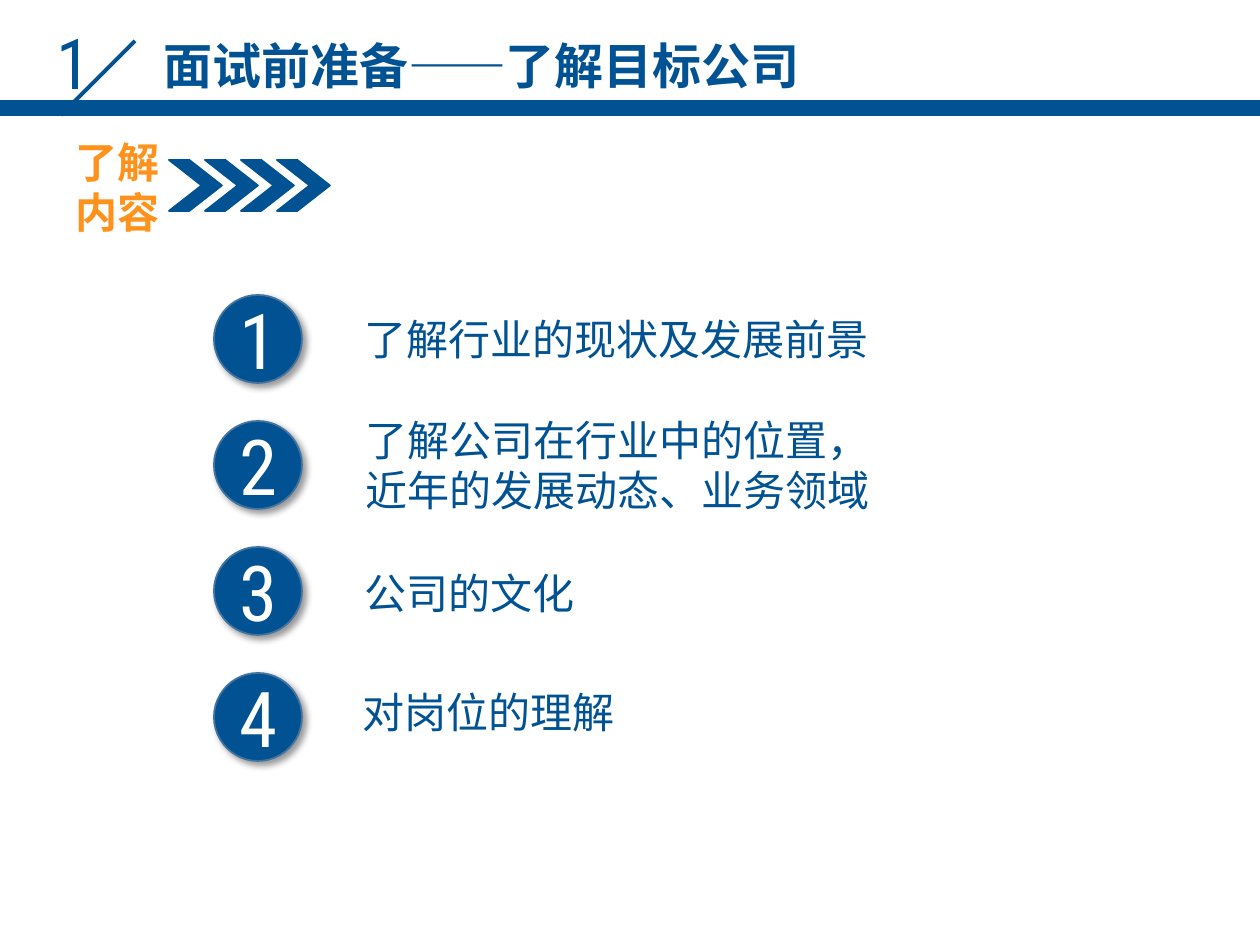
from lxml.etree import SubElement
from pptx import Presentation
from pptx.dml.color import RGBColor
from pptx.enum.shapes import MSO_CONNECTOR, MSO_SHAPE
from pptx.oxml.ns import qn
from pptx.util import Emu, Pt

BLUE, RIM, ORANGE, WHITE = "005292", "43739E", "FF921D", "FFFFFF"
CJK, LATIN = "Noto Sans CJK SC", "Roboto Condensed"
TOPICS = [
    ("了解行业的现状及发展前景", 352, 12, 908),
    ("了解公司在行业中的位置，近年的发展动态、业务领域", 353, -13, 558),
    ("公司的文化", 352, 14, 796),
    ("对岗位的理解", 350, 7, 796),
]


def px(length):
    return Emu(length * 914400 // 126)


def color(hex_code):
    return RGBColor.from_string(hex_code)


def add_text(slide, text, box, size, face, hex_code, bold=False):
    frame = slide.shapes.add_textbox(*map(px, box)).text_frame
    frame.word_wrap = True
    paragraph = frame.paragraphs[0]
    run = paragraph.add_run()
    run.text = text
    font = paragraph.font
    font.size, font.name, font.bold = Pt(size), face, bold
    font.color.rgb = color(hex_code)
    if face == CJK:
        paragraph.line_spacing = Pt(size * 1.2)
        SubElement(run._r.get_or_add_rPr(), qn("a:ea"), typeface=face)


def add_solid(slide, preset, box, rim=BLUE):
    solid = slide.shapes.add_shape(preset, *map(px, box))
    solid.shadow.inherit = False
    solid.fill.solid()
    solid.fill.fore_color.rgb = color(BLUE)
    solid.line.color.rgb = color(rim)
    solid.line.width = Pt(1)
    return solid


def add_drop_shadow(solid):
    effects = solid._element.spPr.find(qn("a:effectLst"))
    shadow = SubElement(effects, qn("a:outerShdw"), blurRad=str(Pt(4)), dist=str(Pt(3)),
                        dir="2700000", algn="tl", rotWithShape="0")
    tint = SubElement(shadow, qn("a:srgbClr"), val="000000")
    SubElement(tint, qn("a:alpha"), val="40000")


def add_header(slide, left, top, width):
    add_text(slide, "1", (left + 44, top + 13, 33, 97), 40, LATIN, BLUE)
    add_text(slide, "面试前准备——了解目标公司", (left + 151, top + 29, 725, 72), 28, CJK, BLUE, True)
    slash = slide.shapes.add_connector(
        MSO_CONNECTOR.STRAIGHT, px(left + 135), px(top + 41), px(left + 61), px(top + 115))
    slash.line.color.rgb = color(BLUE)
    slash.line.width = Pt(2.25)
    SubElement(slash._element.spPr, qn("a:effectLst"))
    add_solid(slide, MSO_SHAPE.RECTANGLE, (left, top + 101, width, 14))


def add_section_label(slide, left, top):
    add_text(slide, "了解内容", (left, top, 117, 115), 24, CJK, ORANGE, True)
    for step in range(4):
        chevron = add_solid(slide, MSO_SHAPE.CHEVRON, (left + 106 + 36 * step, top + 30, 53, 51))
        chevron.adjustments[0] = 0.64


def add_topics(slide, left, top, pitch):
    for number, (topic, topic_left, shift, width) in enumerate(TOPICS, 1):
        row = top + pitch * (number - 1)
        badge = add_solid(slide, MSO_SHAPE.OVAL, (left, row, 88, 88), RIM)
        add_drop_shadow(badge)
        add_text(slide, str(number), (left + 13, row - 9, 42, 106), 44, LATIN, WHITE)
        height = 115 if shift < 0 else 63
        add_text(slide, topic, (topic_left, row + shift, width, height), 24, CJK, BLUE)


def main():
    deck = Presentation()
    deck.slide_width, deck.slide_height = px(1260), px(945)
    slide = deck.slides.add_slide(deck.slide_layouts[6])
    add_header(slide, 0, 0, 1260)
    add_section_label(slide, 63, 130)
    add_topics(slide, 214, 295, 126)
    deck.save("out.pptx")


if __name__ == "__main__":
    main()
